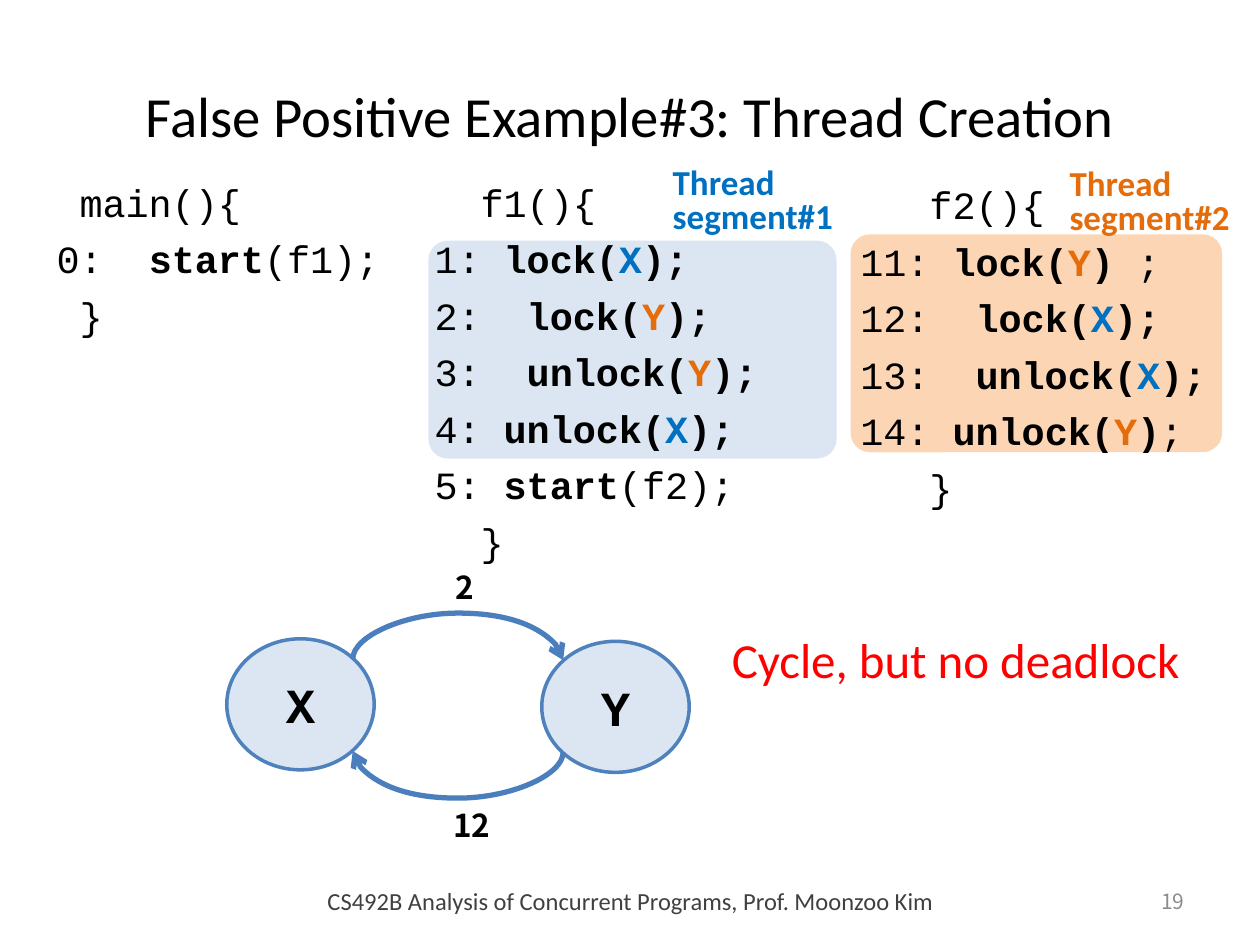
from itertools import groupby

from lxml.etree import SubElement
from pptx import Presentation
from pptx.dml.color import RGBColor
from pptx.enum.shapes import MSO_CONNECTOR as Connector, MSO_SHAPE as Shape
from pptx.enum.text import MSO_ANCHOR as Anchor, MSO_AUTO_SIZE as AutoSize, PP_ALIGN as Align
from pptx.oxml.ns import qn
from pptx.util import Inches, Pt

BLACK, BLUE, ORANGE, RED = "000000", "0070C0", "E46C0A", "FF0000"
PALE_BLUE, PALE_ORANGE, NODE_EDGE, ARROW = "DCE6F2", "FCD5B5", "4F81BD", "4B7EBC"
SANS, MONO, NUMERALS = "Calibri", "Courier New", "Noto Sans CJK KR"
LOCK_COLOURS = {"X": BLUE, "Y": ORANGE}

TITLE = "False Positive Example#3: Thread Creation"
SEGMENTS = [
    ((6.75, 1.86, 2.95, 1.73), PALE_ORANGE),
    ((3.4, 1.91, 3.24, 1.73), PALE_BLUE),
]
# Each line of code is plain text, bold text, plain text.
FUNCTIONS = [
    ((0.35, 1.37, 3.31, 3.64), [
        (" main(){", "", ""),
        ("0:  ", "start", "(f1);"),
        (" }", "", ""),
    ]),
    ((3.35, 1.37, 3.31, 3.64), [
        ("  f1(){", "", ""),
        ("1:", " lock(X);", ""),
        ("2:", "  lock(Y);", ""),
        ("3:", "  unlock(Y);", ""),
        ("4:", " unlock(X);", ""),
        ("5: ", "start", "(f2);"),
        ("  }", "", ""),
    ]),
    ((6.73, 1.39, 3.04, 3.27), [
        ("   f2(){", "", ""),
        ("11: ", "lock(Y)", " ;"),
        ("12:", "  lock(X);", ""),
        ("13:  ", "unlock(X);", ""),
        ("14:", " unlock(Y)", ";"),
        ("   }", "", ""),
    ]),
]
SEGMENT_LABELS = [
    ((5.24, 1.29, 1.65, 0.65), ("Thread ", "segment#1"), BLUE),
    ((8.39, 1.3, 1.64, 0.65), ("Thread ", "segment#2"), ORANGE),
]
NODES = [("X", (1.8, 5.07, 1.17, 1.04)), ("Y", (4.3, 5.09, 1.17, 1.04))]
EDGES = [(4.4, 270), (5.13, 90)]
EDGE_LEFT, EDGE_THICKNESS, EDGE_SPAN, EDGE_BULGE = 3.63, 0.01, 1.67, -37
CAPTIONS = [
    ("Cycle, but no deadlock", (5.71, 4.95, 3.94, 0.57), 28, SANS, RED, False, Align.LEFT, Anchor.TOP),
    ("2", (3.52, 4.46, 0.43, 0.4), 18, NUMERALS, BLACK, True, Align.LEFT, Anchor.TOP),
    ("12", (3.5, 6.35, 0.75, 0.4), 18, NUMERALS, BLACK, True, Align.LEFT, Anchor.TOP),
    ("19", (8.46, 6.95, 1.04, 0.4), 12, NUMERALS, "8C8C8C", False, Align.RIGHT, Anchor.MIDDLE),
    ("CS492B Analysis of Concurrent Programs, Prof. Moonzoo Kim", (2.09, 6.95, 5.83, 0.4),
     14, SANS, "404040", False, Align.CENTER, Anchor.MIDDLE),
]


def rgb(colour):
    """Turn a hex string into a colour."""
    return RGBColor.from_string(colour)


def inches(box):
    """Turn a box of numbers into lengths."""
    return [Inches(length) for length in box]


def add_run(paragraph, text, size, font, colour=BLACK, bold=False):
    """Append one formatted run."""
    run = paragraph.add_run()
    run.text = text
    run.font.size, run.font.name, run.font.bold = Pt(size), font, bold
    run.font.color.rgb = rgb(colour)


def add_frame(slide, box, anchor=Anchor.TOP):
    """Add a wrapping text box and return its frame."""
    frame = slide.shapes.add_textbox(*inches(box)).text_frame
    frame.word_wrap, frame.vertical_anchor = True, anchor
    return frame


def add_solid(slide, kind, box, fill):
    """Add a flat filled shape without an outline."""
    solid = slide.shapes.add_shape(kind, *inches(box))
    solid.shadow.inherit = False
    solid.fill.solid()
    solid.fill.fore_color.rgb = rgb(fill)
    solid.line.fill.background()
    return solid


def add_code(slide, box, lines):
    """Write a function, colouring the lock names in its bold parts."""
    frame = add_frame(slide, box)
    for index, (before, bold, after) in enumerate(lines):
        paragraph = frame.add_paragraph() if index else frame.paragraphs[0]
        paragraph.space_before = Pt(5.9)
        add_run(paragraph, before, 22, MONO)
        for colour, letters in groupby(bold, lambda letter: LOCK_COLOURS.get(letter, BLACK)):
            add_run(paragraph, "".join(letters), 22, MONO, colour, True)
        if after:
            add_run(paragraph, after, 22, MONO)


def add_edge(slide, top, rotation):
    """Add a curved arrow between the two lock nodes."""
    edge = slide.shapes.add_connector(Connector.CURVE, *inches(
        (EDGE_LEFT + EDGE_THICKNESS, top, EDGE_LEFT, top + EDGE_SPAN)))
    edge.line.color.rgb, edge.line.width = rgb(ARROW), Pt(3)
    properties = edge.element.spPr
    properties.find(qn("a:xfrm")).set("rot", str(rotation * 60000))
    geometry = properties.find(qn("a:prstGeom"))
    guides = geometry.find(qn("a:avLst"))
    if guides is None:
        guides = SubElement(geometry, qn("a:avLst"))
    SubElement(guides, qn("a:gd"), name="adj1", fmla=f"val {EDGE_BULGE * 100000}")
    SubElement(properties.find(qn("a:ln")), qn("a:tailEnd"), type="arrow")
    SubElement(properties, qn("a:effectLst"))


def main():
    """Build and save the slide."""
    deck = Presentation()
    deck.slide_width, deck.slide_height = Inches(10), Inches(7.5)
    slide = deck.slides.add_slide(deck.slide_layouts[5])

    title = slide.shapes.title
    title.left, title.top, title.width, title.height = inches((0.5, 0.6, 9, 0.63))
    title.text_frame.auto_size = AutoSize.NONE
    title.text_frame.vertical_anchor = Anchor.MIDDLE
    heading = title.text_frame.paragraphs[0]
    heading.alignment = Align.CENTER
    add_run(heading, TITLE, 32.4, SANS)

    for box, fill in SEGMENTS:
        add_solid(slide, Shape.ROUNDED_RECTANGLE, box, fill).adjustments[0] = 0.09
    for box, lines in FUNCTIONS:
        add_code(slide, box, lines)

    for name, box in NODES:
        node = add_solid(slide, Shape.OVAL, box, PALE_BLUE)
        node.line.color.rgb, node.line.width = rgb(NODE_EDGE), Pt(2)
        node.text_frame.vertical_anchor = Anchor.MIDDLE
        paragraph = node.text_frame.paragraphs[0]
        paragraph.alignment = Align.CENTER
        add_run(paragraph, name, 28, MONO, bold=True)
    for top, rotation in EDGES:
        add_edge(slide, top, rotation)

    for box, (first, second), colour in SEGMENT_LABELS:
        paragraph = add_frame(slide, box).paragraphs[0]
        paragraph.line_spacing = 0.8
        add_run(paragraph, first, 20, SANS, colour, True)
        paragraph.add_line_break()
        add_run(paragraph, second, 20, SANS, colour, True)

    for text, box, size, font, colour, bold, alignment, anchor in CAPTIONS:
        paragraph = add_frame(slide, box, anchor).paragraphs[0]
        paragraph.alignment = alignment
        add_run(paragraph, text, size, font, colour, bold)

    deck.save("out.pptx")


if __name__ == "__main__":
    main()
